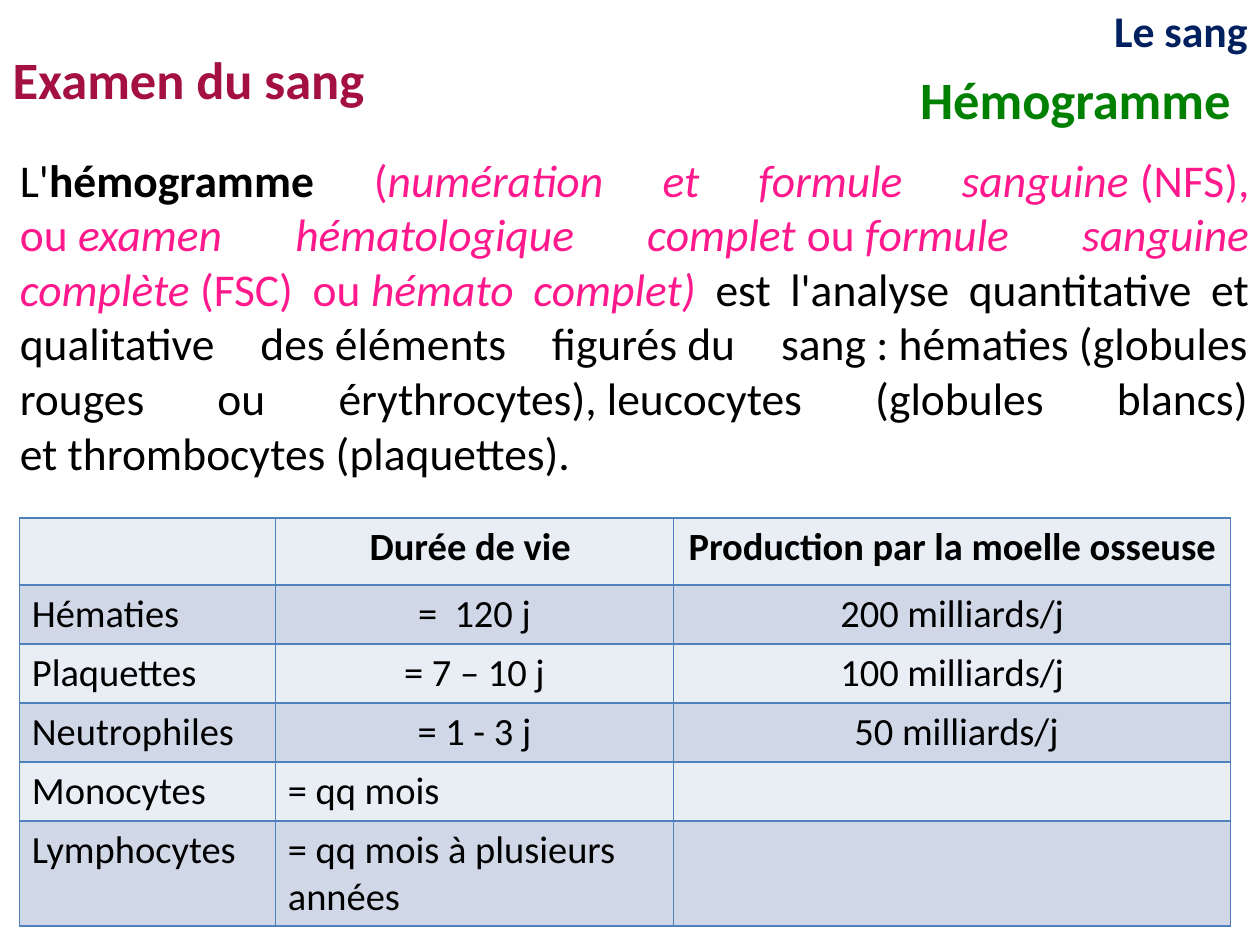
import pptx
import pptx.util
import pptx.dml.color
import pptx.enum.text
import pptx.oxml
import pptx.oxml.ns
from dataclasses import dataclass

Cm = pptx.util.Cm
Pt = pptx.util.Pt
ALIGN = pptx.enum.text.PP_ALIGN
ANCHOR = pptx.enum.text.MSO_ANCHOR
FIT = pptx.enum.text.MSO_AUTO_SIZE


@dataclass
class Theme:
    font: str = "Calibri"
    head: int = 30
    topic: int = 25
    body: int = 26
    cell: int = 22
    red: str = "A41041"
    navy: str = "002060"
    green: str = "008000"
    pink: str = "FF198C"
    ink: str = "000000"
    line: str = "4F81BD"
    bands: tuple = ("E9EDF4", "D0D8E8")


def bind(text):
    """Turn each tilde into a space that does not break or stretch."""
    return text.replace("~", chr(160))


class Page:
    def __init__(self, deck, theme):
        self.theme = theme
        self.slide = deck.slides.add_slide(deck.slide_layouts[5])

    def style(self, run, size, color, bold=False, italic=False):
        font = run.font
        font.name, font.size = self.theme.font, Pt(size)
        font.bold, font.italic = bold, italic
        font.color.rgb = pptx.dml.color.RGBColor.from_string(color)

    def place(self, shape, box):
        shape.left, shape.top, shape.width, shape.height = map(Cm, box)

    def label(self, shape, text, size, color, align):
        frame = shape.text_frame
        frame.word_wrap = True
        frame.auto_size = FIT.NONE
        frame.vertical_anchor = ANCHOR.MIDDLE
        frame.text = text
        para = frame.paragraphs[0]
        para.alignment = align
        self.style(para.runs[0], size, color, bold=True)

    def title(self, box, text, size, color):
        shape = self.slide.shapes.title
        self.place(shape, box)
        self.label(shape, text, size, color, ALIGN.LEFT)

    def head(self, box, text, size, color, align=ALIGN.LEFT):
        shape = self.slide.shapes.add_textbox(*map(Cm, box))
        self.label(shape, text, size, color, align)

    def prose(self, box, parts):
        """Add one justified paragraph from (text, color, bold, italic) parts."""
        frame = self.slide.shapes.add_textbox(*map(Cm, box)).text_frame
        frame.word_wrap = True
        frame.auto_size = FIT.SHAPE_TO_FIT_TEXT
        frame.vertical_anchor = ANCHOR.MIDDLE
        frame.margin_left = frame.margin_right = 0
        frame.margin_top = frame.margin_bottom = 0
        para = frame.paragraphs[0]
        para.alignment = ALIGN.JUSTIFY
        for text, color, bold, italic in parts:
            run = para.add_run()
            run.text = bind(text)
            self.style(run, self.theme.body, color, bold, italic)

    def border(self, cell):
        props = cell._tc.get_or_add_tcPr()
        for side in "LRTB":
            props.append(pptx.oxml.parse_xml(
                f'<a:ln{side} {pptx.oxml.ns.nsdecls("a")} w="12700"><a:solidFill>'
                f'<a:srgbClr val="{self.theme.line}"/></a:solidFill></a:ln{side}>'))

    def table(self, left, top, cols, rows, data, mid):
        """Add a banded grid; the first `mid` rows centre all but column one."""
        frame = self.slide.shapes.add_table(
            len(rows), len(cols), Cm(left), Cm(top), Cm(sum(cols)), Cm(sum(rows)))
        grid = frame.table
        grid.first_row = grid.horz_banding = False
        for col, width in zip(grid.columns, cols):
            col.width = Cm(width)
        for r, (height, texts) in enumerate(zip(rows, data)):
            grid.rows[r].height = Cm(height)
            for c, text in enumerate(texts):
                cell = grid.cell(r, c)
                self.border(cell)
                cell.fill.solid()
                cell.fill.fore_color.rgb = pptx.dml.color.RGBColor.from_string(
                    self.theme.bands[r % 2])
                cell.text_frame.text = bind(text)
                para = cell.text_frame.paragraphs[0]
                para.alignment = ALIGN.CENTER if c and r < mid else ALIGN.LEFT
                for run in para.runs:
                    self.style(run, self.theme.cell, self.theme.ink, bold=r == 0)


def main():
    deck = pptx.Presentation()
    deck.slide_width, deck.slide_height = Cm(25.4), Cm(19.05)
    theme = Theme()
    page = Page(deck, theme)
    ink, pink = theme.ink, theme.pink

    page.prose((0.4, 3.02, 24.79, 6.68), [
        ("L'", ink, False, False),
        ("hémogramme ", ink, True, False),
        ("(", pink, False, False),
        ("numération et formule sanguine", pink, False, True),
        ("~(NFS), ou~", pink, False, False),
        ("examen hématologique complet", pink, False, True),
        ("~ou~", pink, False, False),
        ("formule sanguine complète", pink, False, True),
        ("~(FSC) ou~", pink, False, False),
        ("hémato complet) ", pink, False, True),
        ("est l'analyse quantitative et qualitative des~éléments figurés~du "
         "sang~:~hématies~(globules rouges ou érythrocytes),~leucocytes "
         "(globules blancs) et~thrombocytes~(plaquettes).", ink, False, False),
    ])
    page.table(0.39, 10.44, (5.16, 8.03, 11.23), (1.35, *[1.19] * 4, 2.11), [
        ("", "Durée de vie ", "Production par la moelle osseuse"),
        ("Hématies", "=~ 120 j", "200 milliards/j"),
        ("Plaquettes", "= 7 – 10 j", "100 milliards/j"),
        ("Neutrophiles", "= 1 - 3 j", "~50 milliards/j"),
        ("Monocytes", "= qq mois", ""),
        ("Lymphocytes", "= qq mois à plusieurs années", ""),
    ], mid=4)
    page.title((0, 0, 22.86, 3.18), "Examen du sang", theme.head, theme.red)
    page.head((2.54, -0.99, 22.86, 3.18), "Le sang", theme.topic, theme.navy,
              ALIGN.RIGHT)
    page.head((18.3, 0.4, 7.7, 3.18), "Hémogramme", theme.head, theme.green)
    deck.save("out.pptx")


if __name__ == "__main__":
    main()
